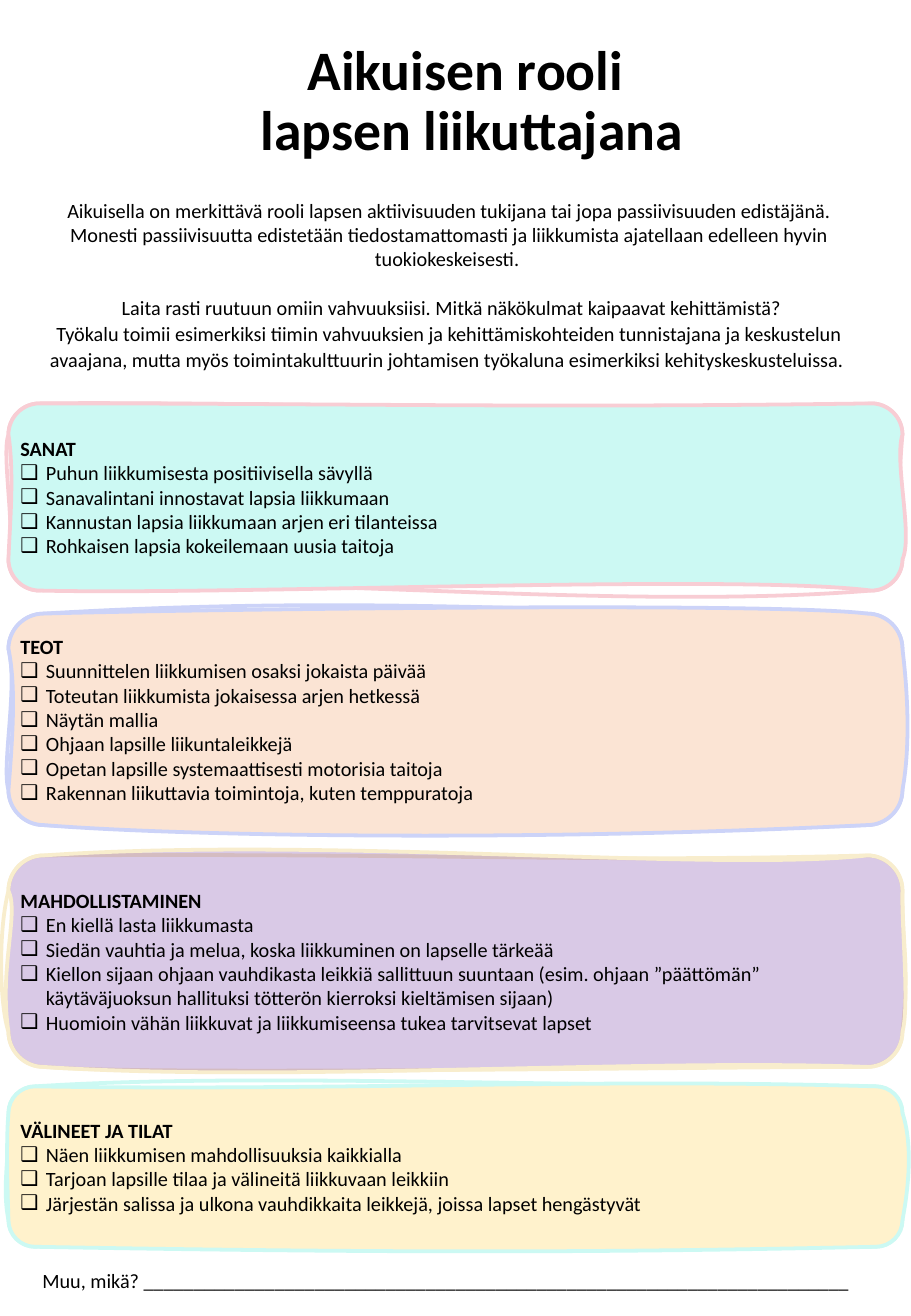
from lxml.etree import SubElement
from pptx import Presentation
from pptx.dml.color import RGBColor
from pptx.enum.text import MSO_ANCHOR, PP_ALIGN
from pptx.oxml.ns import qn
from pptx.util import Inches, Pt

FONT = "Calibri"
BODY, TITLE = 12, 33
BLACK = RGBColor(0, 0, 0)
MINT = RGBColor(0xCC, 0xF9, 0xF3)
PINK = RGBColor(0xF8, 0xCD, 0xD4)
PEACH = RGBColor(0xFB, 0xE4, 0xD4)
PERIWINKLE = RGBColor(0xCC, 0xD3, 0xF8)
PURPLE = RGBColor(0x70, 0x30, 0xA0)
SAND = RGBColor(0xF8, 0xED, 0xCD)
CREAM = RGBColor(0xFF, 0xF2, 0xCC)

WIDTH, HEIGHT = 7.5, 10.83
LEFT = 0.07
RIGHT = WIDTH - LEFT
INDENT = 0.21

# Each card: top, height, fill, opacity in percent, line, heading, items, and
# two pen strokes. A stroke holds the two control points of the top, right,
# bottom and left side, in inches on the slide.
CARDS = [
    (3.32, 1.54, MINT, 100, PINK, "SANAT", [
        "Puhun liikkumisesta positiivisella sävyllä",
        "Sanavalintani innostavat lapsia liikkumaan",
        "Kannustan lapsia liikkumaan arjen eri tilanteissa",
        "Rohkaisen lapsia kokeilemaan uusia taitoja",
    ], [
        [(2.05, 3.3), (5.91, 3.42), (7.39, 4.03), (7.4, 4.37),
         (4.94, 5.04), (1.88, 4.68), (0.13, 4.37), (0.01, 3.73)],
        [(2.98, 3.32), (4.36, 3.36), (7.36, 3.8), (7.52, 4.41),
         (6.04, 4.72), (1.91, 4.9), (0.08, 4.32), (0.12, 3.92)],
    ]),
    (7.04, 1.74, PURPLE, 26, SAND, "MAHDOLLISTAMINEN", [
        "En kiellä lasta liikkumasta",
        "Siedän vauhtia ja melua, koska liikkuminen on lapselle tärkeää",
        "Kiellon sijaan ohjaan vauhdikasta leikkiä sallittuun suuntaan (esim. ohjaan "
        "”päättömän” käytäväjuoksun hallituksi tötterön kierroksi kieltämisen sijaan)",
        "Huomioin vähän liikkuvat ja liikkumiseensa tukea tarvitsevat lapset",
    ], [
        [(3.67, 7.02), (4.83, 7.1), (7.43, 7.82), (7.49, 7.94),
         (5.74, 8.78), (1.14, 8.85), (0, 8.29), (-0.02, 7.68)],
        [(2.69, 6.88), (5.88, 7.18), (7.42, 7.59), (7.49, 8.28),
         (5.24, 8.71), (2.3, 8.91), (-0.01, 7.97), (0.16, 7.52)],
    ]),
    (8.94, 1.32, CREAM, 100, MINT, "VÄLINEET JA TILAT", [
        "Näen liikkumisen mahdollisuuksia kaikkialla",
        "Tarjoan lapsille tilaa ja välineitä liikkuvaan leikkiin",
        "Järjestän salissa ja ulkona vauhdikkaita leikkejä, joissa lapset hengästyvät",
    ], [
        [(1.98, 8.83), (4.39, 8.94), (7.45, 9.27), (7.42, 9.8),
         (5.72, 10.23), (2.61, 10.07), (0.01, 9.75), (0.09, 9.45)],
        [(2.75, 8.98), (4.87, 8.87), (7.5, 9.36), (7.5, 9.68),
         (5.31, 10.3), (3.62, 10.32), (0.06, 9.72), (0.05, 9.37)],
    ]),
    (5.05, 1.74, PEACH, 100, PERIWINKLE, "TEOT", [
        "Suunnittelen liikkumisen osaksi jokaista päivää",
        "Toteutan liikkumista jokaisessa arjen hetkessä",
        "Näytän mallia",
        "Ohjaan lapsille liikuntaleikkejä",
        "Opetan lapsille systemaattisesti motorisia taitoja",
        "Rakennan liikuttavia toimintoja, kuten temppuratoja",
    ], [
        [(3.21, 4.88), (4.96, 5.08), (7.41, 5.48), (7.43, 6.3),
         (6.04, 6.84), (1.58, 6.86), (0.01, 6.31), (0.15, 5.65)],
        [(1.31, 5.02), (6.37, 4.95), (7.5, 5.91), (7.47, 6.29),
         (4.33, 6.93), (1.47, 6.88), (0.11, 6), (0.13, 5.64)],
    ]),
]

INTRO = [
    "Aikuisella on merkittävä rooli lapsen aktiivisuuden tukijana tai jopa passiivisuuden "
    "edistäjänä. Monesti passiivisuutta edistetään tiedostamattomasti ja liikkumista "
    "ajatellaan edelleen hyvin tuokiokeskeisesti. ",
    " Laita rasti ruutuun omiin vahvuuksiisi. Mitkä näkökulmat kaipaavat kehittämistä?",
    "Työkalu toimii esimerkiksi tiimin vahvuuksien ja kehittämiskohteiden tunnistajana ja "
    "keskustelun avaajana, mutta myös toimintakulttuurin johtamisen työkaluna esimerkiksi "
    "kehityskeskusteluissa. ",
]


def add_run(p, text, size=BODY, bold=False):
    r = p.add_run()
    r.text = text
    r.font.name, r.font.size, r.font.bold = FONT, Pt(size), bold
    r.font.color.rgb = BLACK


def add_paragraph(tf, align):
    """Use the empty first paragraph before adding further ones."""
    p = tf.paragraphs[0]
    if p.runs:
        p = tf.add_paragraph()
    p.alignment = align
    return p


def add_text_frame(slide, left, top, width, height, anchor):
    tf = slide.shapes.add_textbox(*map(Inches, (left, top, width, height))).text_frame
    tf.word_wrap = True
    tf.vertical_anchor = anchor
    return tf


def add_checkbox(p):
    pPr = p._p.get_or_add_pPr()
    pPr.set("marL", str(Inches(INDENT)))
    pPr.set("indent", str(-Inches(INDENT)))
    color = SubElement(pPr, qn("a:buClr"))
    SubElement(color, qn("a:srgbClr")).set("val", str(BLACK))
    SubElement(pPr, qn("a:buFont")).set("typeface", FONT)
    SubElement(pPr, qn("a:buChar")).set("char", "❑")


def stroke_curves(top, height, controls):
    """Start and curves of a rounded rectangle whose sides wobble, clockwise."""
    r, bottom = height / 6, top + height
    corners = [(LEFT, top), (RIGHT, top), (RIGHT, bottom), (LEFT, bottom)]
    directions = [(1, 0), (0, 1), (-1, 0), (0, -1)]

    def shift(point, direction, distance):
        return tuple(a + d * distance for a, d in zip(point, direction))

    curves = []
    for i, corner in enumerate(corners):
        before, after = directions[i - 1], directions[i]
        curves.append([shift(corner, before, -0.45 * r), shift(corner, after, 0.45 * r),
                       shift(corner, after, r)])
        curves.append([*controls[2 * i:2 * i + 2], shift(corners[(i + 1) % 4], after, -r)])
    return curves[-1][-1], curves


def add_sketched_box(slide, top, height, strokes):
    """Draw the strokes as the curved outlines of one freeform."""
    left, right = Inches(LEFT), Inches(RIGHT)
    upper, lower = Inches(top), Inches(top + height)
    builder = slide.shapes.build_freeform(left, upper)
    builder.add_line_segments([(right, upper), (right, lower), (left, lower)])
    s = builder.convert_to_shape()
    outlines = s._element.spPr.find(qn("a:custGeom")).find(qn("a:pathLst"))
    outlines.clear()

    def add_points(parent, tag, points):
        step = SubElement(parent, qn(tag))
        for x, y in points:
            pt = SubElement(step, qn("a:pt"))
            pt.set("x", str(Inches(x) - left))
            pt.set("y", str(Inches(y) - upper))

    for fill, controls in zip(("none", "norm"), strokes):
        outline = SubElement(outlines, qn("a:path"))
        for name, value in (("w", s.width), ("h", s.height), ("fill", fill)):
            outline.set(name, str(value))
        start, curves = stroke_curves(top, height, controls)
        add_points(outline, "a:moveTo", [start])
        for points in curves:
            add_points(outline, "a:cubicBezTo", points)
        SubElement(outline, qn("a:close"))
    return s


def add_card(slide, top, height, fill, opacity, line, heading, items, strokes):
    s = add_sketched_box(slide, top, height, strokes)
    s.shadow.inherit = False
    s.line.color.rgb, s.line.width = line, Pt(2.25)
    s.fill.solid()
    s.fill.fore_color.rgb = fill
    if opacity < 100:
        color = s._element.spPr.find(qn("a:solidFill"))[0]
        SubElement(color, qn("a:alpha")).set("val", str(opacity * 1000))
    tf = s.text_frame
    tf.word_wrap = True
    tf.vertical_anchor = MSO_ANCHOR.MIDDLE
    tf.margin_left, tf.margin_right = Inches(0.1), Inches(0.15)
    tf.margin_top = tf.margin_bottom = Inches(0.05)
    add_run(add_paragraph(tf, PP_ALIGN.LEFT), heading, bold=True)
    for item in items:
        p = add_paragraph(tf, PP_ALIGN.LEFT)
        add_checkbox(p)
        add_run(p, item)


def add_title(slide):
    tf = add_text_frame(slide, 0.2, 0.65, 7.37, 0.74, MSO_ANCHOR.BOTTOM)
    p = add_paragraph(tf, PP_ALIGN.CENTER)
    p.line_spacing = 0.9
    add_run(p, "Aikuisen rooli ", TITLE, True)
    p.add_line_break()
    add_run(p, "lapsen liikuttajana", TITLE, True)


def add_intro(slide):
    tf = add_text_frame(slide, 0.2, 1.33, 7, 2.03, MSO_ANCHOR.MIDDLE)
    for text, gap, spacing in zip(INTRO, (0, 14.65, 0), (1, 1, 1.07)):
        p = add_paragraph(tf, PP_ALIGN.CENTER)
        p.space_before, p.line_spacing = Pt(gap), spacing
        add_run(p, text)


def add_other_line(slide):
    tf = add_text_frame(slide, 0.25, 10.39, 6.88, 0.3, MSO_ANCHOR.TOP)
    add_run(add_paragraph(tf, PP_ALIGN.LEFT), "Muu, mikä? " + "_" * 70)


def main():
    prs = Presentation()
    prs.slide_width, prs.slide_height = Inches(WIDTH), Inches(HEIGHT)
    slide = prs.slides.add_slide(prs.slide_layouts[6])
    add_title(slide)
    for card in CARDS:
        add_card(slide, *card)
    add_intro(slide)
    add_other_line(slide)
    prs.save("out.pptx")


if __name__ == "__main__":
    main()
